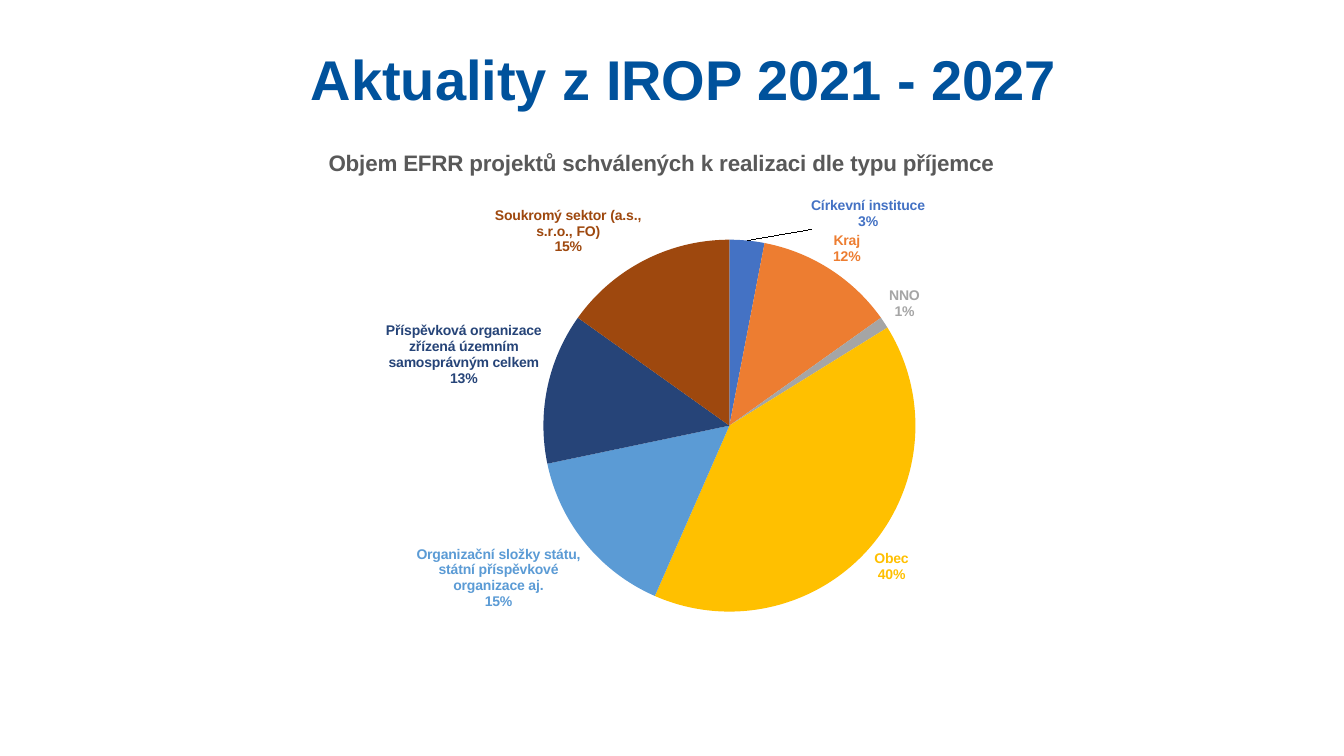
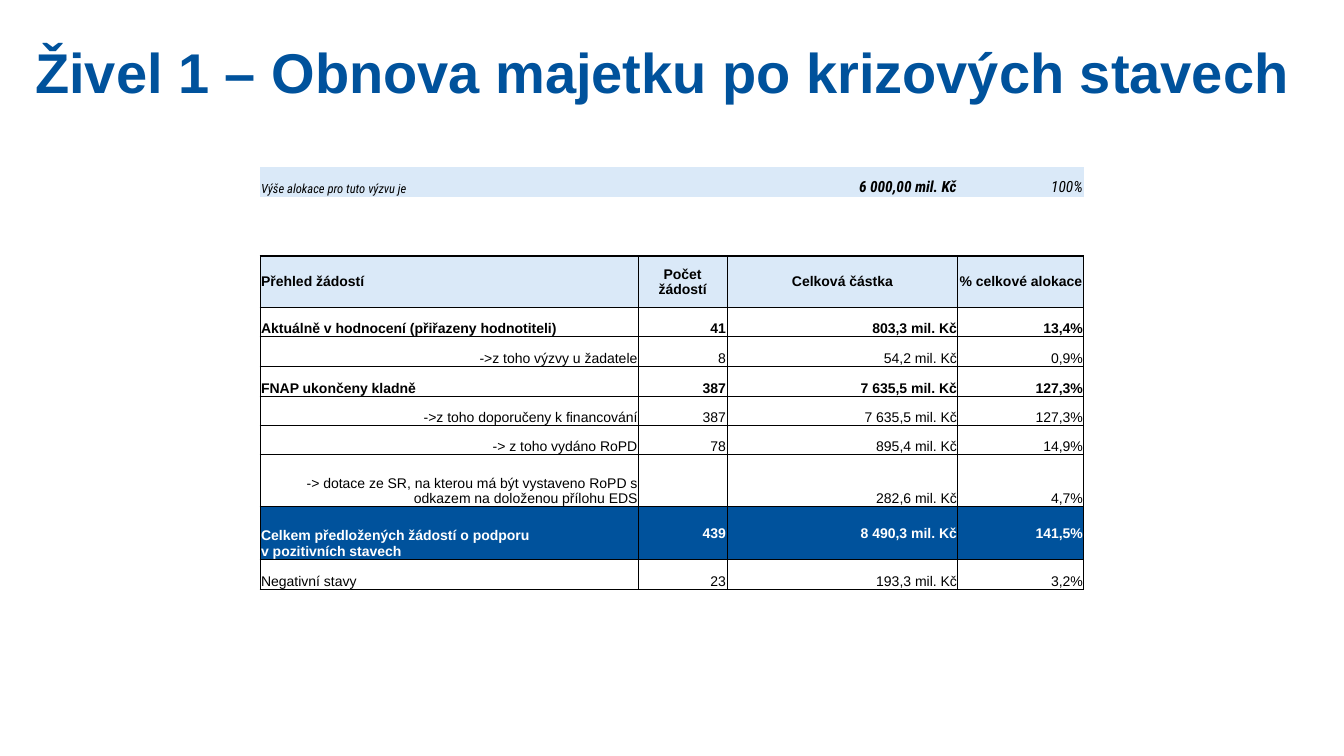
import dataclasses
import typing

import lxml.etree
import pptx
import pptx.chart.data
import pptx.dml.color
import pptx.enum.chart
import pptx.enum.text
import pptx.oxml.ns
import pptx.util

Inches = pptx.util.Inches
Pt = pptx.util.Pt
RGB = pptx.dml.color.RGBColor
qn = pptx.oxml.ns.qn
Align = pptx.enum.text.PP_ALIGN
Anchor = pptx.enum.text.MSO_ANCHOR
Box = tuple[float, float, float, float]

BLUE = RGB(0x00, 0x52, 0x9C)
PALE = RGB(0xDA, 0xE9, 0xF8)
BLACK = RGB(0x00, 0x00, 0x00)
WHITE = RGB(0xFF, 0xFF, 0xFF)
GREY = RGB(0x59, 0x59, 0x59)
FACE = "Arial"
SLIM = "Roboto Condensed"
PLAIN = "{2D5ABB26-0587-4C30-8999-92F81FD0307C}"


@dataclasses.dataclass(frozen=True)
class Slice:
    name: str
    share: int
    color: RGB


@dataclasses.dataclass(frozen=True)
class Row:
    height: float
    kind: str = "blank"
    texts: tuple[str, ...] = ("", "", "", "")


SLICES = (
    Slice("Církevní instituce", 3, RGB(0x44, 0x72, 0xC4)),
    Slice("Kraj", 12, RGB(0xED, 0x7D, 0x31)),
    Slice("NNO", 1, RGB(0xA5, 0xA5, 0xA5)),
    Slice("Obec", 40, RGB(0xFF, 0xC0, 0x00)),
    Slice("Organizační složky státu, státní příspěvkové organizace aj.", 15,
          RGB(0x5B, 0x9B, 0xD5)),
    Slice("Ostatní", 0, RGB(0x70, 0xAD, 0x47)),
    Slice("Příspěvková organizace zřízená územním samosprávným celkem", 13,
          RGB(0x26, 0x44, 0x78)),
    Slice("Soukromý sektor (a.s., s.r.o., FO)", 15, RGB(0x9E, 0x48, 0x0E)),
    Slice("Školy", 0, RGB(0x63, 0x63, 0x63)),
)

COLS = (3.75, 0.88, 2.29, 1.25)
ROWS = (
    Row(0.29, "note", ("Výše alokace pro tuto výzvu je", "", "6 000,00 mil. Kč", "100%")),
    Row(0.29),
    Row(0.3),
    Row(0.51, "head", ("Přehled žádostí", "Počet žádostí", "Celková částka",
                       "% celkové alokace")),
    Row(0.29, "main", ("Aktuálně v hodnocení (přiřazeny hodnotiteli)", "41",
                       "803,3 mil. Kč", "13,4%")),
    Row(0.3, "sub", ("->z toho výzvy u žadatele", "8", "54,2 mil. Kč", "0,9%")),
    Row(0.29, "main", ("FNAP ukončeny kladně", "387", "7 635,5 mil. Kč", "127,3%")),
    Row(0.29, "sub", ("->z toho doporučeny k financování", "387", "7 635,5 mil. Kč",
                      "127,3%")),
    Row(0.29, "sub", ("-> z toho vydáno RoPD", "78", "895,4 mil. Kč", "14,9%")),
    Row(0.52, "sub", ("-> dotace ze SR, na kterou má být vystaveno RoPD s odkazem "
                      "na doloženou přílohu EDS", "", "282,6 mil. Kč", "4,7%")),
    Row(0.52, "total", ("Celkem předložených žádostí o podporu\vv pozitivních stavech",
                        "439", "8 490,3 mil. Kč", "141,5%")),
    Row(0.3, "last", ("Negativní stavy", "23", "193,3 mil. Kč", "3,2%")),
)
FILLS = {"note": PALE, "head": PALE, "total": BLUE}
FIRST = 3
THICK = {2, 3, 5, 9, 10, 11}


def style(font: typing.Any, size: float, color: RGB, bold: bool = True,
          face: str = FACE) -> None:
    font.name = face
    font.size = Pt(size)
    font.bold = bold
    font.color.rgb = color


def start(deck: typing.Any, text: str, box: Box) -> typing.Any:
    slide = deck.slides.add_slide(deck.slide_layouts[5])
    title = slide.shapes.title
    title.left, title.top, title.width, title.height = map(Inches, box)
    frame = title.text_frame
    frame.text = text
    frame.word_wrap = True
    frame.auto_size = pptx.enum.text.MSO_AUTO_SIZE.NONE
    frame.vertical_anchor = Anchor.TOP
    para = frame.paragraphs[0]
    para.alignment = Align.CENTER
    para.line_spacing = 0.9
    style(para.font, 40, BLUE)
    return slide


def place(host: typing.Any, index: int, **parts: typing.Any) -> None:
    for old in host.findall(qn("c:layout")):
        host.remove(old)
    layout = lxml.etree.Element(qn("c:layout"))
    manual = lxml.etree.SubElement(layout, qn("c:manualLayout"))
    for tag, val in parts.items():
        lxml.etree.SubElement(manual, qn(f"c:{tag}")).set("val", str(val))
    host.insert(index, layout)


def draw_pie(slide: typing.Any, text: str, box: Box) -> None:
    data = pptx.chart.data.CategoryChartData()
    data.categories = [part.name for part in SLICES]
    data.add_series(text, [part.share for part in SLICES])
    chart = slide.shapes.add_chart(
        pptx.enum.chart.XL_CHART_TYPE.PIE, *map(Inches, box), data).chart
    style(chart.font, 10, BLACK, False)
    chart.has_legend = False
    chart.has_title = True
    frame = chart.chart_title.text_frame
    frame.text = text
    style(frame.paragraphs[0].font, 16, GREY)
    chart.chart_title.include_in_layout = False
    plot = chart.plots[0]
    plot.vary_by_categories = True
    place(chart._chartSpace.chart.plotArea, 0, layoutTarget="inner", xMode="edge",
          yMode="edge", x=0.37, y=0.21, w=0.41, h=0.71)

    series = plot.series[0]
    spot = pptx.enum.chart.XL_LABEL_POSITION.OUTSIDE_END
    for index, part in enumerate(SLICES):
        point = series.points[index]
        point.format.fill.solid()
        point.format.fill.fore_color.rgb = part.color
        style(point.data_label.font, 10, part.color)
        point.data_label.position = spot
    labels = series.data_labels
    labels.show_value = False
    labels.show_percentage = True
    labels.show_category_name = True
    labels.position = spot
    marks = labels._element.findall(qn("c:dLbl"))
    for mark in marks:
        for tag, val in (("showVal", "0"), ("showCatName", "1"), ("showPercent", "1")):
            mark.find(qn(f"c:{tag}")).set("val", val)
        lxml.etree.SubElement(mark, qn("c:separator")).text = "\n"
    place(marks[0], 1, x=0.07, y=-0.01)


def edge(cell: typing.Any, row: int, col: int) -> None:
    wide = {"L": col == 0, "R": col == len(COLS) - 1,
            "T": row - 1 in THICK, "B": row in THICK}
    props = cell._tc.get_or_add_tcPr()
    for side, bold in wide.items():
        line = lxml.etree.SubElement(props, qn(f"a:ln{side}"))
        line.set("w", str(Pt(1 if bold else 0.5)))
        fill = lxml.etree.SubElement(line, qn("a:solidFill"))
        lxml.etree.SubElement(fill, qn("a:srgbClr")).set("val", str(BLACK))


def fill_cell(cell: typing.Any, row: int, col: int) -> None:
    kind = ROWS[row].kind
    if row >= FIRST:
        edge(cell, row, col)
    if kind in FILLS:
        cell.fill.solid()
        cell.fill.fore_color.rgb = FILLS[kind]
    else:
        cell.fill.background()
    cell.margin_left = cell.margin_right = cell.margin_top = Inches(0.01)
    cell.margin_bottom = 0
    middle = kind == "head" or (kind == "total" and col > 0)
    cell.vertical_anchor = Anchor.MIDDLE if middle else Anchor.BOTTOM
    cell.text = ROWS[row].texts[col]
    para = cell.text_frame.paragraphs[0]
    if col == 0:
        para.alignment = Align.RIGHT if kind == "sub" else Align.LEFT
    else:
        para.alignment = Align.CENTER if kind == "head" else Align.RIGHT
    if kind == "note":
        style(para.font, 11 if col else 9, BLACK, col == 2, SLIM)
        para.font.italic = True
    else:
        style(para.font, 10, WHITE if kind == "total" else BLACK,
              kind in ("head", "main", "total"))


def draw_table(slide: typing.Any, box: Box) -> None:
    table = slide.shapes.add_table(len(ROWS), len(COLS), *map(Inches, box)).table
    table.first_row = table.horz_banding = False
    table._tbl.tblPr.find(qn("a:tableStyleId")).text = PLAIN
    for col, width in enumerate(COLS):
        table.columns[col].width = Inches(width)
    for row, item in enumerate(ROWS):
        table.rows[row].height = Inches(item.height)
        for col in range(len(COLS)):
            fill_cell(table.cell(row, col), row, col)


def main() -> None:
    deck = pptx.Presentation()
    deck.slide_width = Inches(13.33)
    deck.slide_height = Inches(7.5)
    slide = start(deck, "Aktuality z IROP 2021 - 2027", (2.28, 0.47, 9, 0.81))
    draw_pie(slide, "Objem EFRR projektů schválených k realizaci dle typu příjemce",
             (2.06, 1.28, 9, 5.21))
    slide = start(deck, "Živel 1 – Obnova majetku po krizových stavech",
                  (0.17, 0.4, 12.79, 1.45))
    draw_table(slide, (2.58, 1.66, sum(COLS), sum(row.height for row in ROWS)))
    deck.save("out.pptx")


if __name__ == "__main__":
    main()
